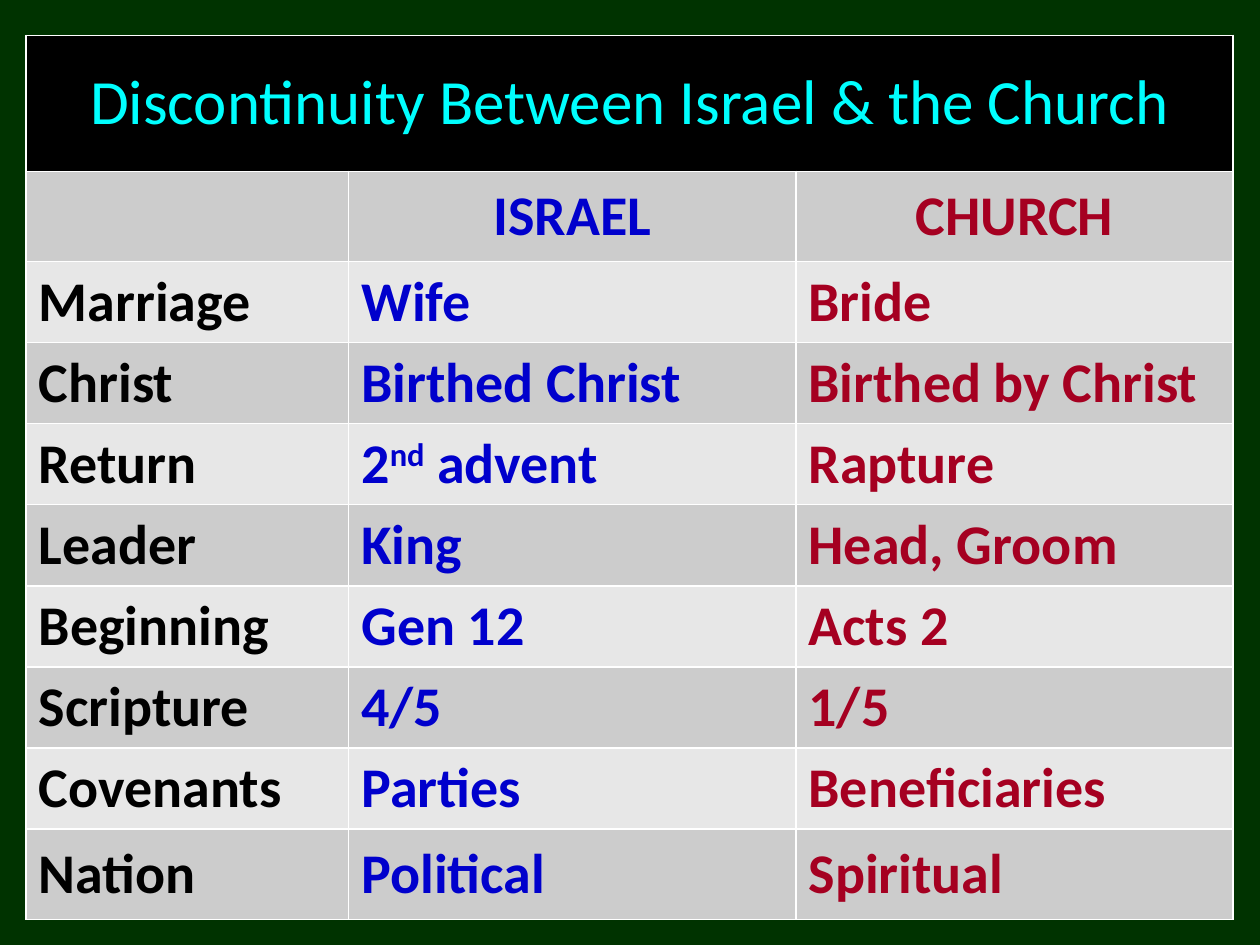
from lxml.etree import SubElement
from pptx import Presentation
from pptx.dml.color import RGBColor
from pptx.enum.text import MSO_ANCHOR, PP_ALIGN
from pptx.oxml.ns import qn
from pptx.util import Pt

COLORS = {
    "page": "003300",
    "banner": "000000",
    "title": "00FFFF",
    "topic": "000000",
    "israel": "0000CC",
    "church": "A50021",
    "dark": "CCCCCC",
    "light": "E7E7E7",
    "border": "FFFFFF",
}
COLUMN_COLORS = ["topic", "israel", "church"]
COLUMN_WIDTHS = [184.3, 255.6, 249.8]
TITLE_HEIGHT, EDGE_HEIGHT, ROW_HEIGHT = 77.7, 51.5, 46.3
TITLE = "Discontinuity Between Israel & the Church"
ROWS = [
    ["", "ISRAEL", "CHURCH"],
    ["Marriage", "Wife", "Bride"],
    ["Christ", "Birthed Christ", "Birthed by Christ"],
    ["Return", "2^nd^ advent", "Rapture"],
    ["Leader", "King", "Head, Groom"],
    ["Beginning", "Gen 12", "Acts 2"],
    ["Scripture", "4/5", "1/5"],
    ["Covenants", "Parties", "Beneficiaries"],
    ["Nation", "Political", "Spiritual"],
]


def rgb(name):
    return RGBColor.from_string(COLORS[name])


def write_text(frame, text, *, font, size, color, bold=False, align=PP_ALIGN.LEFT):
    """Write text into a frame; parts between ^ marks are superscript."""
    para = frame.paragraphs[0]
    para.alignment = align
    for index, part in enumerate(text.split("^")):
        if not part:
            continue
        span = para.add_run()
        span.text = part
        span.font.name = font
        span.font.size = Pt(size)
        span.font.bold = bold
        span.font.color.rgb = rgb(color)
        if index % 2:
            span.font._element.set("baseline", "30000")


class SlideBuilder:
    font = "Calibri"
    title_size = 36
    body_size = 32
    border_width = 1

    def __init__(self, deck):
        self.page = deck.slides.add_slide(deck.slide_layouts[6])

    def background(self, color):
        fill = self.page.background.fill
        fill.solid()
        fill.fore_color.rgb = rgb(color)

    def table(self, left, top, widths, heights):
        frame = self.page.shapes.add_table(
            len(heights), len(widths), Pt(left), Pt(top), Pt(sum(widths)), Pt(sum(heights))
        )
        table = frame.table
        for column, width in zip(table.columns, widths):
            column.width = Pt(width)
        for row, height in zip(table.rows, heights):
            row.height = Pt(height)
        return table

    def borders(self, cell):
        properties = cell._tc.get_or_add_tcPr()
        for side in ("a:lnL", "a:lnR", "a:lnT", "a:lnB"):
            line = SubElement(properties, qn(side), w=str(Pt(self.border_width)))
            fill = SubElement(line, qn("a:solidFill"))
            SubElement(fill, qn("a:srgbClr"), val=COLORS["border"])

    def cell(self, cell, text, fill, **text_format):
        self.borders(cell)
        cell.fill.solid()
        cell.fill.fore_color.rgb = rgb(fill)
        cell.vertical_anchor = MSO_ANCHOR.MIDDLE
        write_text(cell.text_frame, text, font=self.font, **text_format)


def main():
    deck = Presentation()
    deck.slide_width, deck.slide_height = Pt(720), Pt(540)
    slide = SlideBuilder(deck)
    slide.background("page")

    body_heights = [ROW_HEIGHT] * (len(ROWS) - 2)
    heights = [TITLE_HEIGHT, EDGE_HEIGHT, *body_heights, EDGE_HEIGHT]
    table = slide.table(15, 20.2, COLUMN_WIDTHS, heights)

    table.cell(0, 0).merge(table.cell(0, 2))
    for column, text in enumerate([TITLE, "", ""]):
        slide.cell(table.cell(0, column), text, "banner",
                   size=slide.title_size, color="title", align=PP_ALIGN.CENTER)

    for index, row in enumerate(ROWS):
        fill = "light" if index % 2 else "dark"
        align = PP_ALIGN.LEFT if index else PP_ALIGN.CENTER
        for column, text in enumerate(row):
            slide.cell(table.cell(index + 1, column), text, fill, size=slide.body_size,
                       color=COLUMN_COLORS[column], bold=True, align=align)

    deck.save("out.pptx")


if __name__ == "__main__":
    main()
